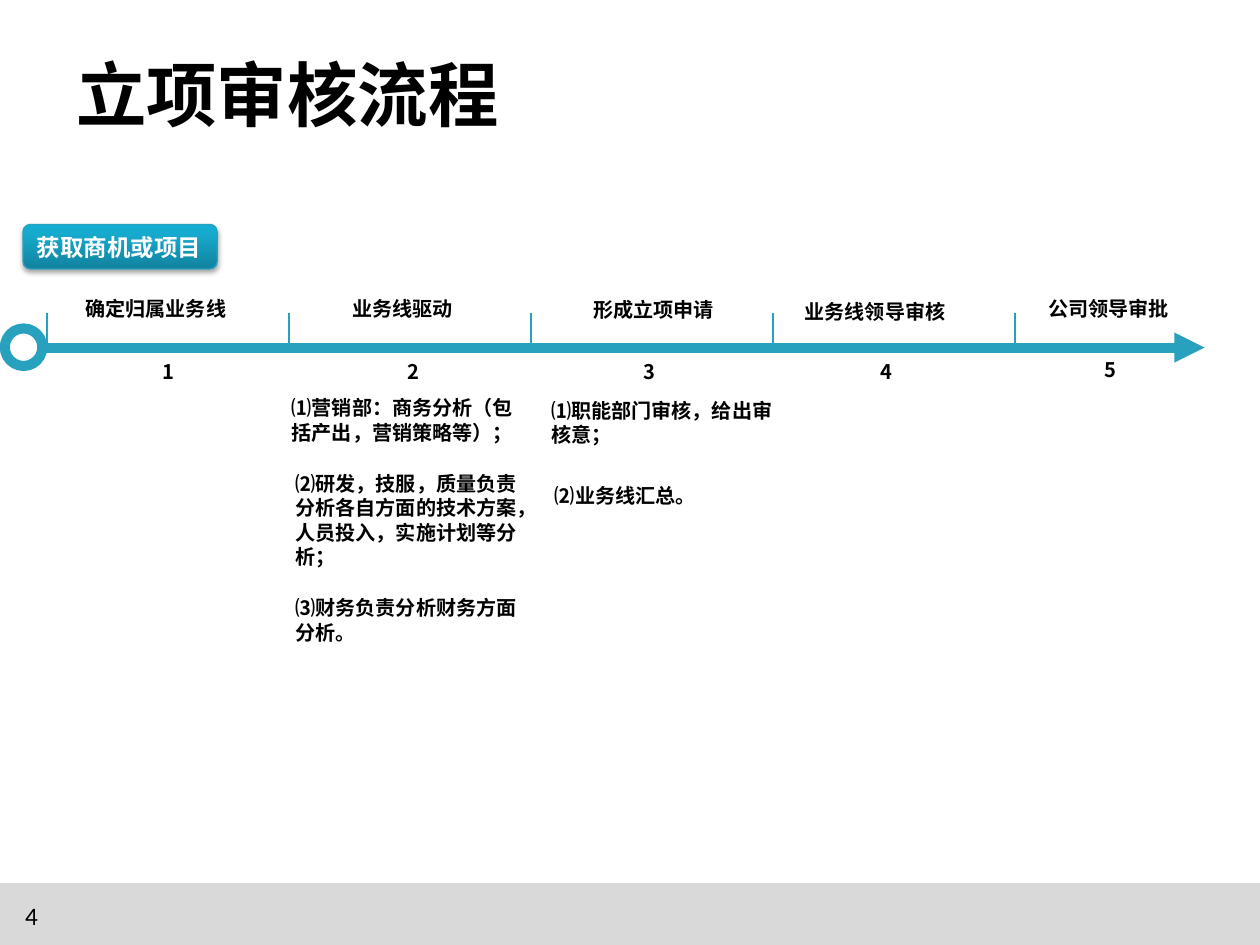
from lxml.etree import SubElement
from pptx import Presentation
from pptx.dml.color import RGBColor
from pptx.enum.shapes import MSO_CONNECTOR, MSO_SHAPE
from pptx.enum.text import MSO_ANCHOR, PP_ALIGN
from pptx.oxml import parse_xml
from pptx.oxml.ns import nsdecls, qn
from pptx.util import Pt

BLACK = RGBColor(0, 0, 0)
WHITE = RGBColor(255, 255, 255)
TEAL = RGBColor(0x28, 0xA1, 0xBE)
FOOTER_GREY = RGBColor(0xD9, 0xD9, 0xD9)
GRADIENT = [
    (0, RGBColor(0x11, 0x83, 0x9F)),
    (80, RGBColor(0x16, 0xAA, 0xCE)),
    (100, RGBColor(0x13, 0xAD, 0xD3)),
]
CJK_FONT = "Noto Sans CJK SC"


def write(box, text, size=12, font=CJK_FONT, color=BLACK, bold=True,
          wrap=True, anchor=MSO_ANCHOR.TOP, align=PP_ALIGN.LEFT, side_inset=7.2):
    frame = box.text_frame
    frame.word_wrap = wrap
    frame.vertical_anchor = anchor
    frame.margin_left = frame.margin_right = Pt(side_inset)
    para = frame.paragraphs[0]
    para.alignment = align
    span = para.add_run()
    span.text = text
    span.font.size = Pt(size)
    span.font.bold = bold
    span.font.color.rgb = color
    span.font.name = font
    SubElement(span.font._element, qn("a:ea"), typeface=font)


def add_line(x1, y1, x2, y2, width):
    line = slide.shapes.add_connector(
        MSO_CONNECTOR.STRAIGHT, Pt(x1), Pt(y1), Pt(x2), Pt(y2))
    line.line.color.rgb = TEAL
    line.line.width = Pt(width)
    SubElement(line._element.spPr, qn("a:effectLst"))
    return line


deck = Presentation()
deck.slide_width, deck.slide_height = Pt(751.7), Pt(563.8)
slide = deck.slides.add_slide(deck.slide_layouts[6])
shapes = slide.shapes

# Footer, title and page number
footer = shapes.add_shape(MSO_SHAPE.RECTANGLE, 0, Pt(527), Pt(751.7), Pt(36.8))
footer.shadow.inherit = False
footer.fill.solid()
footer.fill.fore_color.rgb = FOOTER_GREY
footer.line.fill.background()

title = shapes.add_textbox(Pt(39.6), Pt(27.4), Pt(535), Pt(56.9))
write(title, "立项审核流程", size=42, anchor=MSO_ANCHOR.MIDDLE, side_inset=5.8)

page_number = shapes.add_textbox(Pt(7.9), Pt(533.5), Pt(82.8), Pt(23.8))
write(page_number, "4", size=15, font="Calibri", bold=False)

# Starting point of the process
start = shapes.add_shape(
    MSO_SHAPE.ROUNDED_RECTANGLE, Pt(13.7), Pt(133.9), Pt(115.9), Pt(26.6))
start.line.color.rgb = TEAL
start.line.width = Pt(0.75)
stops = "".join(
    f'<a:gs pos="{position * 1000}"><a:srgbClr val="{color}"/></a:gs>'
    for position, color in GRADIENT)
start._element.spPr.find(qn("a:prstGeom")).addnext(parse_xml(
    f'<a:gradFill {nsdecls("a")} rotWithShape="1"><a:gsLst>{stops}</a:gsLst>'
    '<a:lin ang="16200000" scaled="0"/></a:gradFill>'))
start._element.spPr.append(parse_xml(
    f'<a:effectLst {nsdecls("a")}>'
    f'<a:outerShdw blurRad="{Pt(3.1)}" dist="{Pt(1.8)}" dir="5400000" rotWithShape="0">'
    '<a:srgbClr val="000000"><a:alpha val="35000"/></a:srgbClr>'
    '</a:outerShdw></a:effectLst>'))
write(start, "获取商机或项目", size=14, color=WHITE, wrap=False,
      anchor=MSO_ANCHOR.MIDDLE)

# Timeline
axis = add_line(25.2, 207.4, 718.6, 207.4, 6)
SubElement(axis.line._get_or_add_ln(), qn("a:tailEnd"), type="triangle")

ring = shapes.add_shape(MSO_SHAPE.OVAL, Pt(2.9), Pt(196), Pt(22.4), Pt(22.4))
ring.shadow.inherit = False
ring.fill.solid()
ring.fill.fore_color.rgb = WHITE
ring.line.color.rgb = TEAL
ring.line.width = Pt(6)

# Step label, its left, top and width, then the left and top of its number
STEPS = [
    ("确定归属业务线", 43.9, 173.5, 108.7, 90, 211),
    ("业务线驱动", 203, 173.5, 85, 236.2, 211),
    ("形成立项申请", 347, 174.2, 103, 376.6, 211),
    ("业务线领导审核", 473, 175, 121.7, 518.4, 211),
    ("公司领导审批", 618.5, 173.5, 91.4, 651.6, 209.5),
]
for index, (label, left, top, width, number_left, number_top) in enumerate(STEPS):
    tick_x = 28.1 + 144.36 * index
    add_line(tick_x, 209.5, tick_x, 186.5, 1)
    label_box = shapes.add_textbox(Pt(left), Pt(top), Pt(width), Pt(21.6))
    write(label_box, label)
    number_box = shapes.add_textbox(
        Pt(number_left), Pt(number_top), Pt(22.3), Pt(21.6))
    write(number_box, str(index + 1), wrap=False)

# Details below steps 2 and 3
DETAILS = [
    ("⑴营销部：商务分析（包括产出，营销策略等）；", 167, 232.6, 36),
    ("⑵研发，技服，质量负责分析各自方面的技术方案，人员投入，实施计划等分析；",
     169.2, 277.9, 65.5),
    ("⑶财务负责分析财务方面分析。", 169.2, 352, 36),
    ("⑴职能部门审核，给出审核意；", 321.8, 234, 36),
    ("⑵业务线汇总。", 324, 285, 21.6),
]
for detail, left, top, height in DETAILS:
    detail_box = shapes.add_textbox(Pt(left), Pt(top), Pt(154.8), Pt(height))
    write(detail_box, detail)

deck.save("out.pptx")
